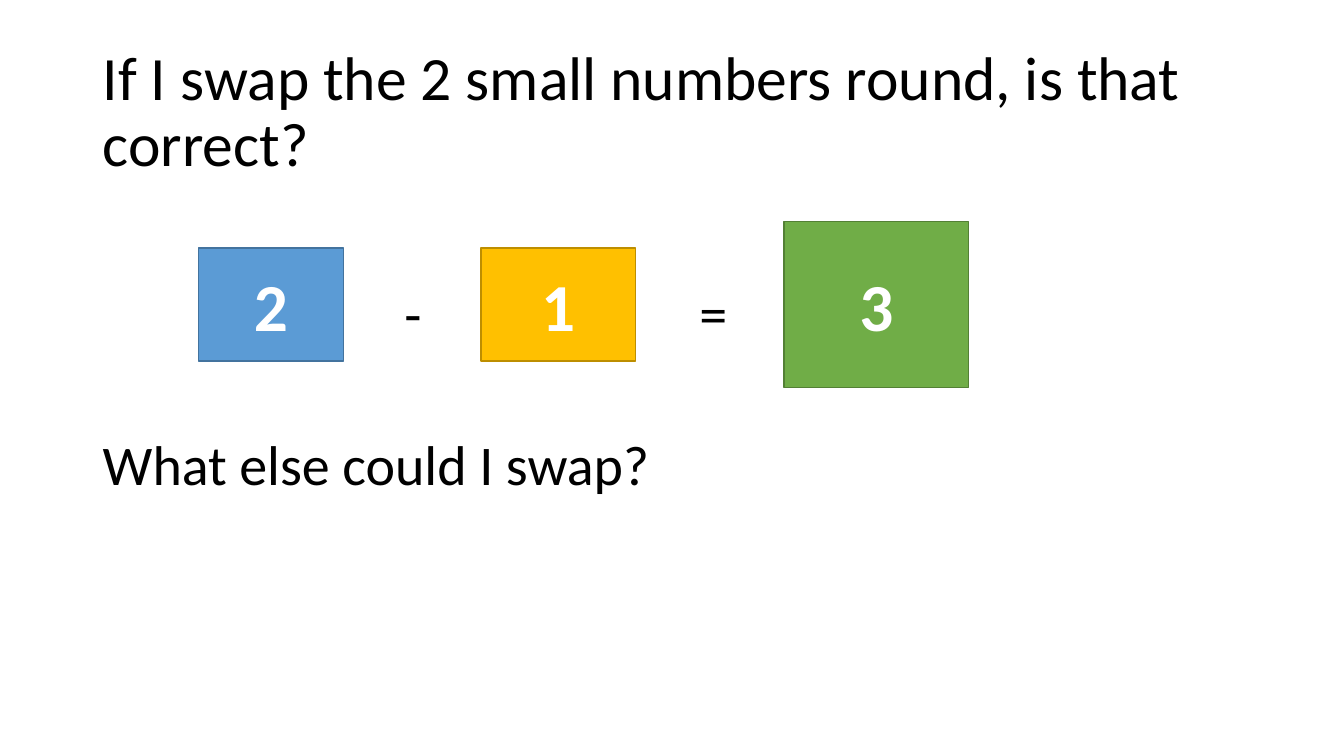
from pptx import Presentation
from pptx.dml.color import RGBColor
from pptx.enum.shapes import MSO_SHAPE
from pptx.enum.text import MSO_ANCHOR, PP_ALIGN
from pptx.util import Cm, Pt

RECT = MSO_SHAPE.RECTANGLE
TOP, MIDDLE = MSO_ANCHOR.TOP, MSO_ANCHOR.MIDDLE
LEFT, CENTER = PP_ALIGN.LEFT, PP_ALIGN.CENTER

BLACK = RGBColor(0x00, 0x00, 0x00)
WHITE = RGBColor(0xFF, 0xFF, 0xFF)
BLUE = RGBColor(0x5B, 0x9B, 0xD5)
NAVY = RGBColor(0x43, 0x73, 0x9E)
GOLD = RGBColor(0xFF, 0xC0, 0x00)
BROWN = RGBColor(0xBD, 0x8E, 0x00)
GREEN = RGBColor(0x70, 0xAD, 0x47)
MOSS = RGBColor(0x53, 0x80, 0x35)

# Text, left, width, height, fill, line
CARDS = [
    ("2", 2.66, 3.66, 2.84, BLUE, NAVY),
    ("1", 9.78, 3.89, 2.84, GOLD, BROWN),
    ("3", 17.42, 4.65, 4.17, GREEN, MOSS),
]
# Text, centre
SIGNS = [("-", 8.07), ("=", 15.64)]
SIGN_W = 2


def write(shape, text, size, color=BLACK, align=LEFT, anchor=TOP,
          bold=False, pitch=0.9):
    frame = shape.text_frame
    frame.word_wrap = True
    frame.vertical_anchor = anchor
    para = frame.paragraphs[0]
    para.alignment = align
    para.line_spacing = pitch
    run = para.add_run()
    run.text = text
    look = {"name": "Calibri", "size": Pt(size), "bold": bold}
    for key, value in look.items():
        setattr(run.font, key, value)
    run.font.color.rgb = color


def label(slide, box, text, size, **style):
    shape = slide.shapes.add_textbox(*map(Cm, box))
    write(shape, text, size, **style)


def card(slide, box, text, fill, line):
    """Draw a filled box that holds one number."""
    shape = slide.shapes.add_shape(RECT, *map(Cm, box))
    shape.shadow.inherit = False
    shape.fill.solid()
    shape.fill.fore_color.rgb = fill
    shape.line.color.rgb = line
    shape.line.width = Pt(1)
    write(shape, text, 48, color=WHITE, align=CENTER, anchor=MIDDLE,
          bold=True, pitch=1.0)


def title(slide, box):
    label(slide, box, "If I swap the 2 small numbers round, is that correct?",
          44, anchor=MIDDLE)


def sum_row(slide, box):
    """Set the cards on one middle line, with the signs between them."""
    left, top, _, high = box
    for text, x, wide, tall, fill, line in CARDS:
        place = (left + x, top + (high - tall) / 2, wide, tall)
        card(slide, place, text, fill, line)
    for text, mid in SIGNS:
        place = (left + mid - SIGN_W / 2, top + 1.5, SIGN_W, 1.8)
        label(slide, place, text, 40, align=CENTER)


def question(slide, box):
    label(slide, box, "What else could I swap?", 40)


def main():
    deck = Presentation()
    deck.slide_width, deck.slide_height = Cm(33.87), Cm(19.05)
    slide = deck.slides.add_slide(deck.slide_layouts[6])
    title(slide, (2.34, 1.02, 29.21, 3.68))
    sum_row(slide, (2.34, 5.59, 29.21, 4.17))
    question(slide, (2.34, 10.9, 29.21, 1.8))
    deck.save("out.pptx")


if __name__ == "__main__":
    main()
